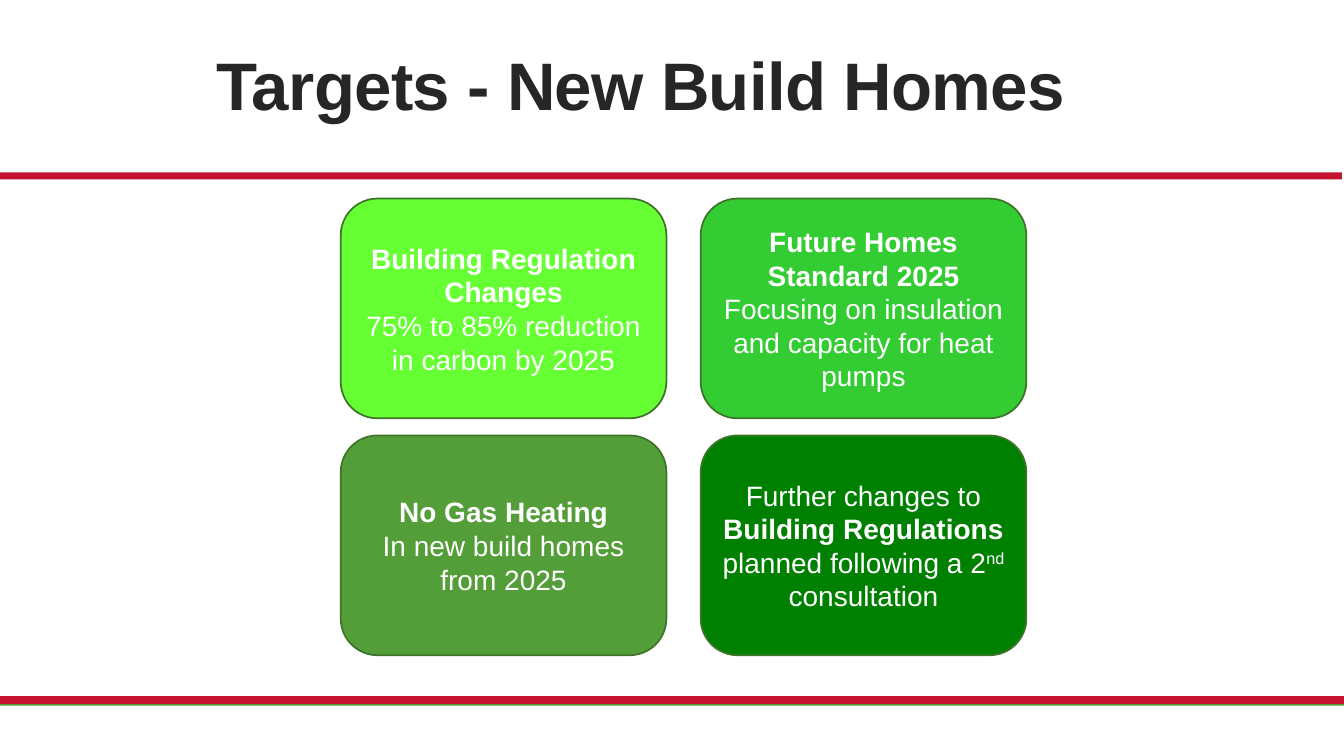
from pptx import Presentation, util as u
from pptx.dml.color import RGBColor
from pptx.enum import shapes, text

RED = RGBColor(0xC5, 0x12, 0x30)
LEAF = RGBColor(0x54, 0x9E, 0x39)
LIME = RGBColor(0x66, 0xFF, 0x33)
BRIGHT = RGBColor(0x33, 0xCC, 0x33)
DEEP = RGBColor(0x00, 0x80, 0x00)
EDGE = RGBColor(0x3E, 0x75, 0x2A)
INK = RGBColor(0x26, 0x26, 0x26)
WHITE = RGBColor(0xFF, 0xFF, 0xFF)

BOLD = {"bold": True}
PLAIN = {"bold": False}


class TargetsSlide:
    font = "Arial"
    line_width = u.Pt(1.25)

    def __init__(self, deck):
        self.slide = deck.slides.add_slide(deck.slide_layouts[6])

    def add_span(self, para, words, size, color, values, **extras):
        """Add a run; extras are run attributes such as spc and baseline."""
        span = para.add_run()
        span.text = words
        for name, value in {"name": self.font, "size": u.Pt(size), **values}.items():
            setattr(span.font, name, value)
        span.font.color.rgb = color
        for name, value in extras.items():
            span._r.get_or_add_rPr().set(name, value)

    def add_block(self, kind, area, fill, line=None):
        block = self.slide.shapes.add_shape(kind, *map(u.Inches, area))
        block.shadow.inherit = False
        block.fill.solid()
        block.fill.fore_color.rgb = fill
        if line is None:
            block.line.fill.background()
        else:
            block.line.color.rgb = line
            block.line.width = self.line_width
        return block

    def add_bar(self, left, top, fill, line=None):
        self.add_block(shapes.MSO_SHAPE.RECTANGLE, (left, top, 13.33, 0.07), fill, line)

    def add_title(self, words):
        box = self.slide.shapes.add_textbox(*map(u.Inches, (2.05, 0.27, 10.62, 1.01)))
        frame = box.text_frame
        frame.word_wrap = True
        frame.vertical_anchor = text.MSO_ANCHOR.BOTTOM
        para = frame.paragraphs[0]
        para.line_spacing = 0.85
        self.add_span(para, words, 48, INK, BOLD, spc="-50")

    def add_card(self, left, top, fill, paragraphs):
        card = self.add_block(shapes.MSO_SHAPE.ROUNDED_RECTANGLE,
                              (left, top, 3.23, 2.18), fill, EDGE)
        frame = card.text_frame
        frame.word_wrap = True
        frame.vertical_anchor = text.MSO_ANCHOR.MIDDLE
        for index, spans in enumerate(paragraphs):
            para = frame.add_paragraph() if index else frame.paragraphs[0]
            para.alignment = text.PP_ALIGN.CENTER
            for words, values, *extras in spans:
                self.add_span(para, words, 20, WHITE, values, **dict(extras))


def heading_and_detail(heading, detail):
    return [[(heading, BOLD)], [(detail, PLAIN)]]


def main():
    deck = Presentation()
    deck.slide_width, deck.slide_height = u.Inches(13.33), u.Inches(7.5)
    page = TargetsSlide(deck)

    page.add_bar(0, 6.93, LEAF)
    page.add_bar(0, 6.91, RED, RED)
    page.add_bar(-0.02, 1.71, RED)
    page.add_title("Targets - New Build Homes")

    cards = [
        (LIME, heading_and_detail("Building Regulation Changes",
                                  "75% to 85% reduction in carbon by 2025")),
        (BRIGHT, heading_and_detail("Future Homes Standard 2025",
                                    "Focusing on insulation and capacity for heat pumps")),
        (LEAF, heading_and_detail("No Gas Heating", "In new build homes from 2025")),
        (DEEP, [[("Further changes to ", PLAIN),
                 ("Building Regulations ", BOLD),
                 ("planned following a 2", PLAIN),
                 ("nd", PLAIN, ("baseline", "30000")),
                 (" consultation", PLAIN)]]),
    ]
    for index, (fill, paragraphs) in enumerate(cards):
        row, column = divmod(index, 2)
        page.add_card(3.38 + column * 3.57, 1.97 + row * 2.35, fill, paragraphs)

    deck.save("out.pptx")


if __name__ == "__main__":
    main()
